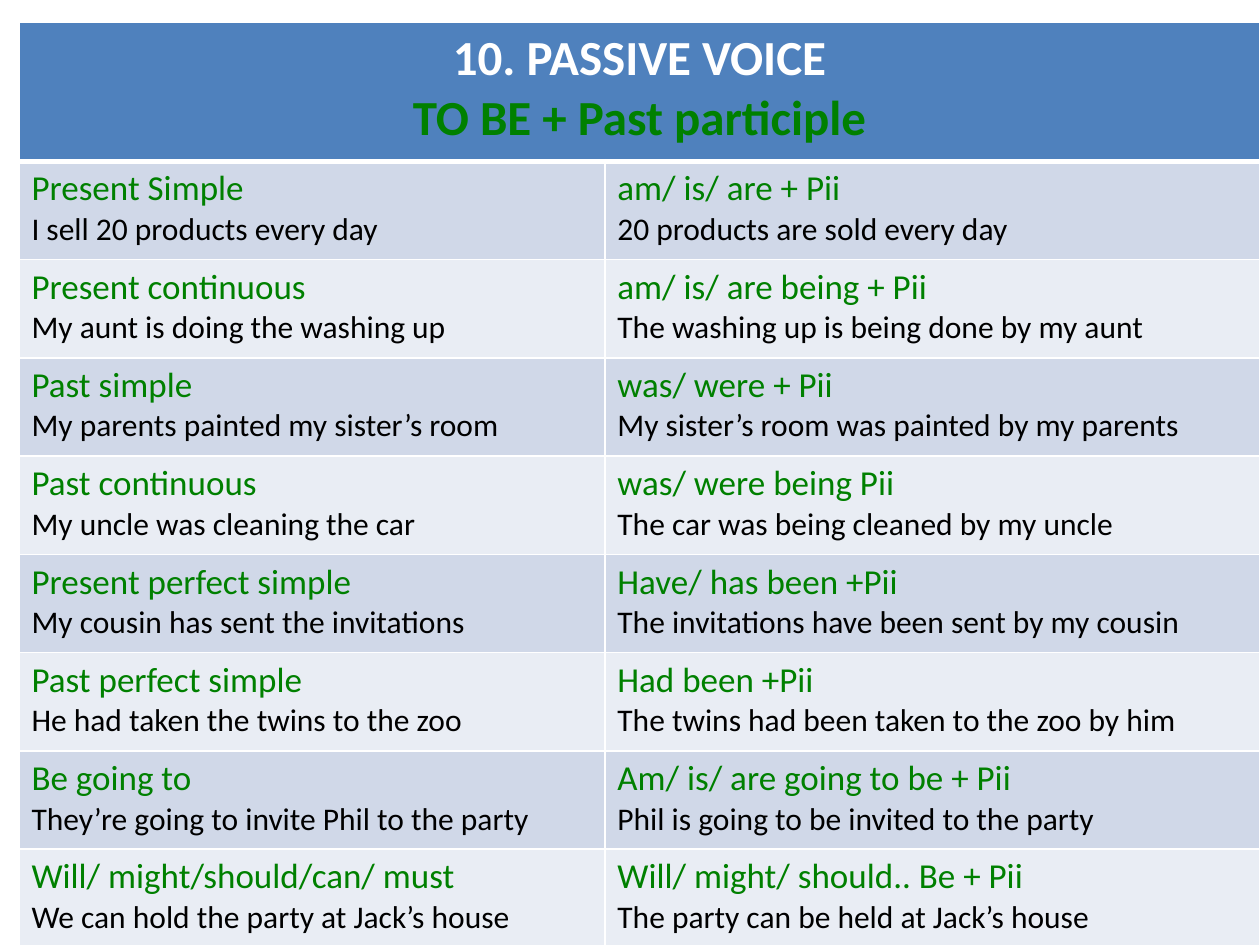
"""Build a one-slide table of the English passive voice by tense."""
from lxml.etree import SubElement
from pptx import Presentation
from pptx.dml.color import RGBColor
from pptx.enum.text import PP_ALIGN
from pptx.oxml.ns import qn
from pptx.util import Inches, Pt

TITLE = ["10. PASSIVE VOICE", "TO BE + Past participle"]
TENSES = [
    (("Present Simple", "I sell 20 products every day"),
     ("am/ is/ are + Pii", "20 products are sold every day")),
    (("Present continuous", "My aunt is doing the washing up"),
     ("am/ is/ are being + Pii", "The washing up is being done by my aunt")),
    (("Past simple", "My parents painted my sister’s room"),
     ("was/ were + Pii", "My sister’s room was painted by my parents")),
    (("Past continuous", "My uncle was cleaning the car"),
     ("was/ were being Pii", "The car was being cleaned by my uncle")),
    (("Present perfect simple", "My cousin has sent the invitations"),
     ("Have/ has been +Pii", "The invitations have been sent by my cousin")),
    (("Past perfect simple", "He had taken the twins to the zoo"),
     ("Had been +Pii", "The twins had been taken to the zoo by him")),
    (("Be going to", "They’re going to invite Phil to the party"),
     ("Am/ is/ are going to be + Pii", "Phil is going to be invited to the party")),
    (("Will/ might/should/can/ must", "We can hold the party at Jack’s house"),
     ("Will/ might/ should.. Be + Pii", "The party can be held at Jack’s house")),
]


def rgb(value):
    return RGBColor.from_string(value)


class Deck:
    FONT = "Calibri"
    WHITE, GREEN, BLACK = "FFFFFF", "008000", "000000"
    HEADER, BANDS = "4F81BD", ("D0D8E8", "E9EDF4")
    TITLE_FORMATS = ({"size": Pt(28), "bold": True, "color": WHITE},
                     {"size": Pt(28), "bold": True, "color": GREEN})
    TENSE_FORMATS = ({"size": Pt(20), "bold": False, "color": GREEN},
                     {"size": Pt(18), "bold": False, "color": BLACK})

    def __init__(self, width, height):
        self.prs = Presentation()
        self.prs.slide_width, self.prs.slide_height = Inches(width), Inches(height)
        self.s = self.prs.slides.add_slide(self.prs.slide_layouts[6])

    def text(self, tf, lines, formats, align):
        for i, (line, fmt) in enumerate(zip(lines, formats)):
            p = tf.add_paragraph() if i else tf.paragraphs[0]
            p.alignment = align
            r = p.add_run()
            r.text = line
            r.font.name = self.FONT
            for name, value in fmt.items():
                if name == "color":
                    r.font.color.rgb = rgb(value)
                else:
                    setattr(r.font, name, value)

    def borders(self, cell, top, bottom):
        tcPr = cell._tc.get_or_add_tcPr()
        for side, width in {"L": 1, "R": 1, "T": top, "B": bottom}.items():
            ln = SubElement(tcPr, qn(f"a:ln{side}"), w=str(Pt(width)))
            SubElement(SubElement(ln, qn("a:solidFill")), qn("a:srgbClr"), val=self.WHITE)

    def cell(self, cell, fill, lines, formats, align=PP_ALIGN.LEFT, top=1, bottom=1):
        self.borders(cell, top, bottom)
        cell.fill.solid()
        cell.fill.fore_color.rgb = rgb(fill)
        self.text(cell.text_frame, lines, formats, align)

    def table(self, left, top, widths, header_height, row_height, title, rows):
        height = header_height + row_height * len(rows)
        table = self.s.shapes.add_table(
            len(rows) + 1, len(widths), Inches(left), Inches(top),
            Inches(sum(widths)), Inches(height)).table
        for column, width in zip(table.columns, widths):
            column.width = Inches(width)
        for i, row in enumerate(table.rows):
            row.height = Inches(row_height if i else header_height)
        table.cell(0, 0).merge(table.cell(0, len(widths) - 1))
        for j in range(len(widths)):
            self.cell(table.cell(0, j), self.HEADER, [] if j else title,
                      self.TITLE_FORMATS, PP_ALIGN.CENTER, bottom=3)
        for i, row in enumerate(rows, 1):
            for j, lines in enumerate(row):
                self.cell(table.cell(i, j), self.BANDS[(i - 1) % 2], lines,
                          self.TENSE_FORMATS, top=3 if i == 1 else 1)


def main():
    deck = Deck(10, 7.5)
    deck.table(0.15, 0.18, (4.65, 5.2), 1.1, 0.78, TITLE, TENSES)
    deck.prs.save("out.pptx")


if __name__ == "__main__":
    main()
